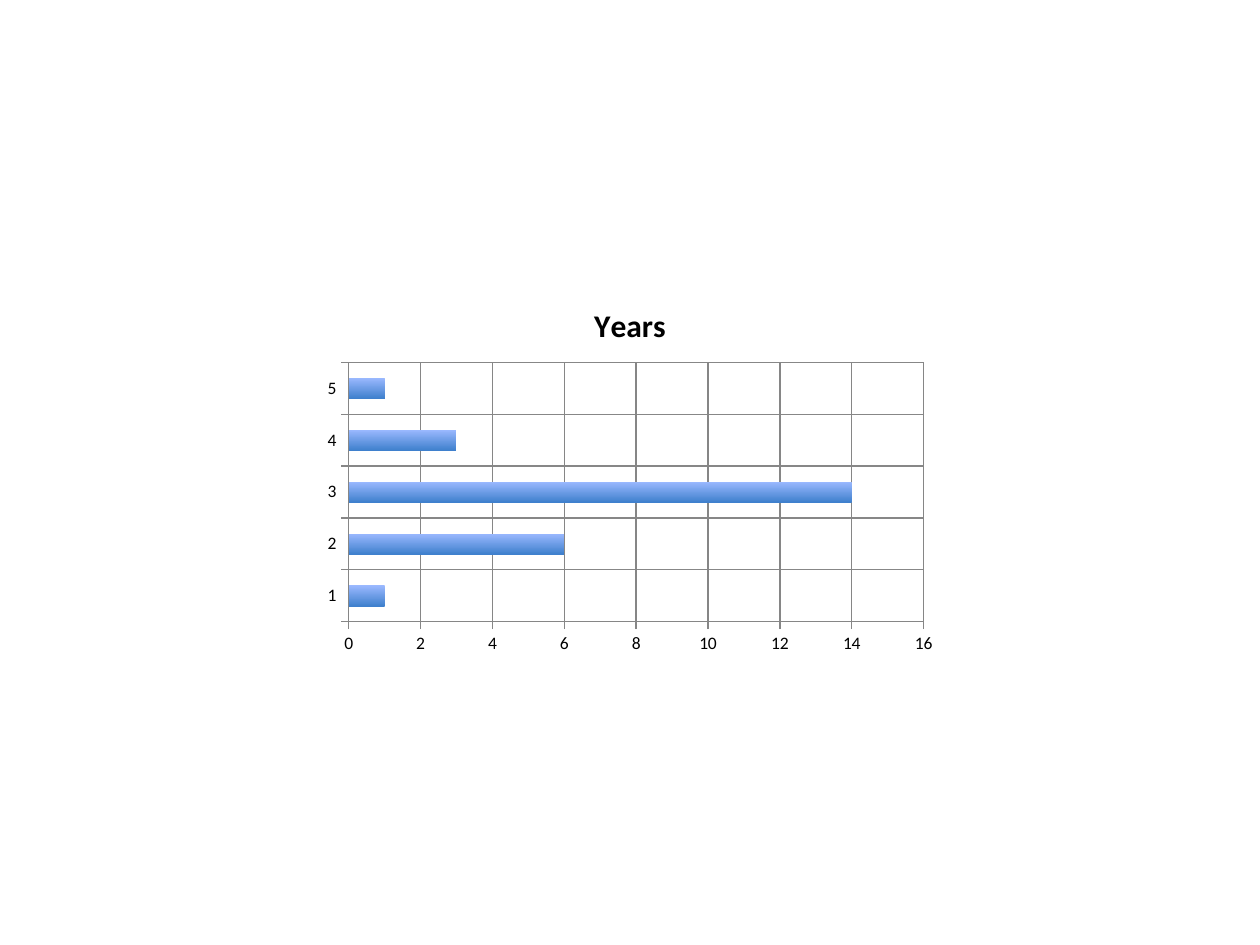
"""Build a slide with one centred bar chart of years."""
from pptx import Presentation
from pptx.chart.data import CategoryChartData
from pptx.dml.color import RGBColor
from pptx.enum.chart import XL_CHART_TYPE, XL_TICK_MARK
from pptx.util import Cm, Pt

BAR_CLUSTERED = XL_CHART_TYPE.BAR_CLUSTERED
OUTSIDE = XL_TICK_MARK.OUTSIDE

TITLE = "Years"
SERIES = "Series 1"
YEARS = {"1": 1, "2": 6, "3": 14, "4": 3, "5": 1}
COLOURS = {"text": "000000", "line": "868686", "bar_top": "9BB9FF", "bar_bottom": "3F80CD"}
PAGE_SIZE = Cm(25.4), Cm(19.05)
CHART_SIZE = Cm(12.7), Cm(7.62)
BODY_FONT = {"name": "Calibri", "size": Pt(10), "bold": False}
TITLE_FONT = {"name": "Calibri", "size": Pt(18), "bold": True}
VALUE_SCALE = {"minimum_scale": 0, "maximum_scale": 16, "major_unit": 2}


def colour(name):
    """Return the named colour."""
    return RGBColor.from_string(COLOURS[name])


def set_all(target, values):
    """Set each attribute in values on the target."""
    for name, value in values.items():
        setattr(target, name, value)


def style_font(font, values):
    """Apply font values and the text colour."""
    set_all(font, values)
    font.color.rgb = colour("text")


def style_line(line):
    """Apply the thin grey line of axes and grid."""
    line.color.rgb = colour("line")
    line.width = Pt(0.75)


def add_years_chart(page):
    """Add the chart in the middle of the page."""
    data = CategoryChartData()
    data.categories = list(YEARS)
    data.add_series(SERIES, list(YEARS.values()))
    left, top = [(whole - part) // 2 for whole, part in zip(PAGE_SIZE, CHART_SIZE)]
    chart = page.shapes.add_chart(BAR_CLUSTERED, left, top, *CHART_SIZE, data).chart
    style_font(chart.font, BODY_FONT)
    chart.has_legend = False

    chart.has_title = True
    para = chart.chart_title.text_frame.paragraphs[0]
    span = para.add_run()
    span.text = TITLE
    style_font(span.font, TITLE_FONT)
    chart.chart_title.include_in_layout = False

    for axis in (chart.category_axis, chart.value_axis):
        set_all(axis, {"major_tick_mark": OUTSIDE, "has_major_gridlines": axis is not chart.category_axis})
        style_line(axis.format.line)
    value_axis = chart.value_axis
    set_all(value_axis, VALUE_SCALE)
    style_line(value_axis.major_gridlines.format.line)

    plot = chart.plots[0]
    set_all(plot, {"gap_width": 150, "vary_by_categories": False})
    fill = plot.series[0].format.fill
    fill.gradient()
    fill.gradient_angle = 270
    for stop, name in zip(fill.gradient_stops, ("bar_top", "bar_bottom")):
        stop.color.rgb = colour(name)


def main():
    """Create the deck and save it."""
    deck = Presentation()
    deck.slide_width, deck.slide_height = PAGE_SIZE
    add_years_chart(deck.slides.add_slide(deck.slide_layouts[6]))
    deck.save("out.pptx")


if __name__ == "__main__":
    main()
